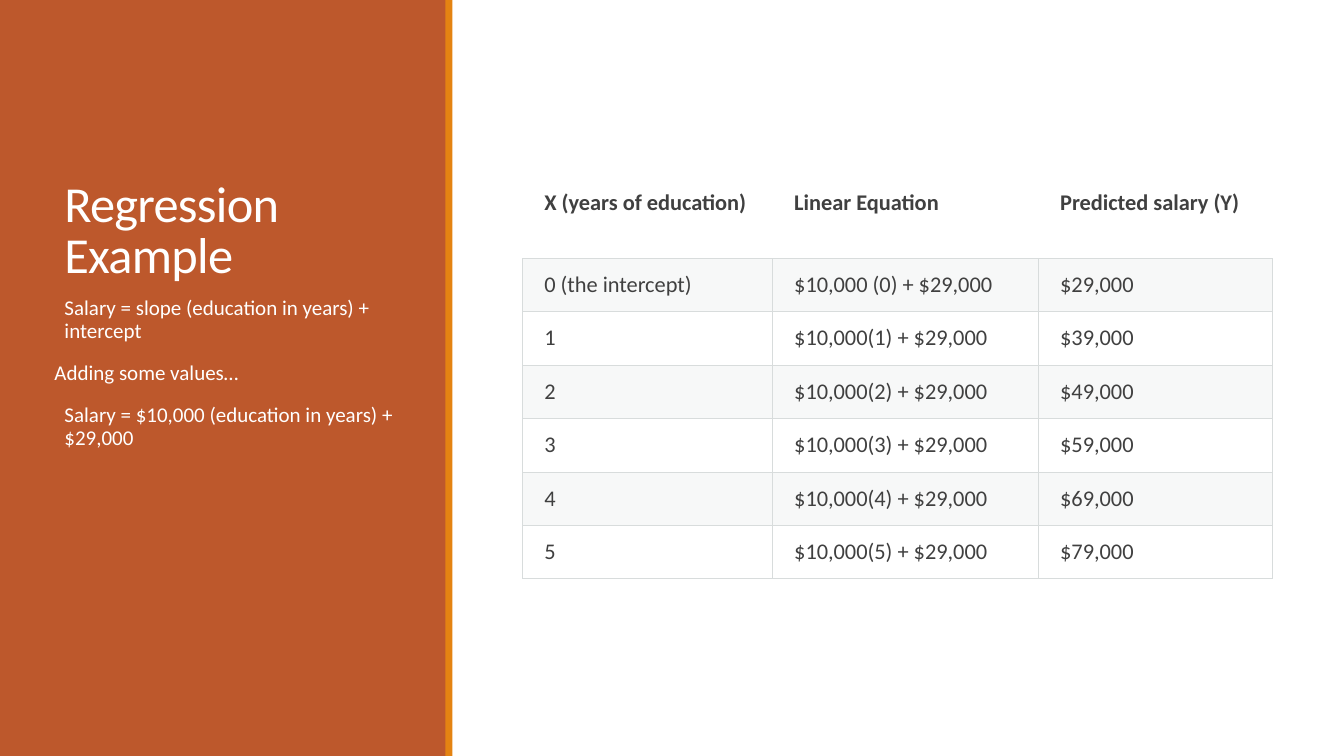
import pptx
import pptx.dml.color
import pptx.enum.shapes
import pptx.enum.text
import pptx.oxml.ns
import pptx.util
from lxml import etree

Pt = pptx.util.Pt
COLORS = {
    "panel": "BD582C",
    "accent": "E48312",
    "white": "FFFFFF",
    "text": "404040",
    "grid": "D8DCDC",
    "band": "D8DEDC",
}


def rgb(name):
    return pptx.dml.color.RGBColor.from_string(COLORS[name])


def add_xml(parent, tag, **attributes):
    return etree.SubElement(parent, pptx.oxml.ns.qn(tag), **attributes)


class SlideBuilder:
    font = "Calibri"

    def __init__(self, s):
        self.s = s

    def rect(self, x, y, w, h, color):
        sp = self.s.shapes.add_shape(
            pptx.enum.shapes.MSO_SHAPE.RECTANGLE, Pt(x), Pt(y), Pt(w), Pt(h))
        sp.shadow.inherit = False
        sp.fill.solid()
        sp.fill.fore_color.rgb = rgb(color)
        sp.line.fill.background()

    def text_box(self, x, y, w, h, margin_x, anchor):
        sp = self.s.shapes.add_textbox(Pt(x), Pt(y), Pt(w), Pt(h))
        tf = sp.text_frame
        tf.word_wrap = True
        tf.vertical_anchor = anchor
        tf.margin_left = tf.margin_right = Pt(margin_x)
        tf.margin_top = tf.margin_bottom = Pt(3.6)
        return tf

    def paragraph(self, p, text, size, color, line, before=0, after=0, bold=False):
        p.line_spacing = line
        p.space_before = Pt(before)
        p.space_after = Pt(after)
        r = p.add_run()
        r.text = text
        r.font.name = self.font
        r.font.size = Pt(size)
        r.font.bold = bold
        r.font.color.rgb = rgb(color)
        return r

    def borders(self, cell, sides):
        """Draw the grid line on the given sides and none on the others."""
        tcPr = cell._tc.get_or_add_tcPr()
        for side in "LRTB":
            ln = add_xml(tcPr, f"a:ln{side}", w=str(Pt(0.75)))
            if side in sides:
                add_xml(add_xml(ln, "a:solidFill"), "a:srgbClr", val=COLORS["grid"])
            else:
                add_xml(ln, "a:noFill")

    def cell_fill(self, cell, banded):
        if not banded:
            cell.fill.background()
            return
        cell.fill.solid()
        cell.fill.fore_color.rgb = rgb("band")
        color = cell._tc.tcPr.find(pptx.oxml.ns.qn("a:solidFill"))[0]
        add_xml(color, "a:alpha", val="20000")

    def table(self, x, y, widths, heights, rows):
        table = self.s.shapes.add_table(
            len(rows), len(widths), Pt(x), Pt(y),
            Pt(sum(widths)), Pt(sum(heights))).table
        table.first_row = table.horz_banding = False
        for column, width in zip(table.columns, widths):
            column.width = Pt(width)
        for i, (row, height, values) in enumerate(zip(table.rows, heights, rows)):
            row.height = Pt(height)
            for cell, value in zip(row.cells, values):
                cell.margin_left, cell.margin_right = Pt(15.4), Pt(5.8)
                cell.margin_top = cell.margin_bottom = Pt(7.7)
                self.borders(cell, "LRTB" if i else "B")
                self.cell_fill(cell, i % 2 == 1)
                self.paragraph(cell.text_frame.paragraphs[0], value, 16, "text",
                               1.07, after=8, bold=i == 0)


def main():
    prs = pptx.Presentation()
    prs.slide_width, prs.slide_height = Pt(960), Pt(540)
    s = prs.slides.add_slide(prs.slide_layouts[6])
    builder = SlideBuilder(s)
    anchor = pptx.enum.text.MSO_ANCHOR

    builder.rect(0, 0, 319, 540, "panel")
    builder.rect(318.2, 0, 5, 540, "accent")

    tf = builder.text_box(38.9, 41, 242.6, 165.6, 7.2, anchor.BOTTOM)
    r = builder.paragraph(tf.paragraphs[0], "Regression Example", 36, "white", 0.85)
    r.font._element.set("spc", "-50")

    tf = builder.text_box(38.9, 208.8, 242.6, 262.8, 0, anchor.TOP)
    notes = [
        ("Salary = slope (education in years) + intercept", 0),
        ("Adding some values…", -7.2),
        ("Salary = $10,000 (education in years) + $29,000", 0),
    ]
    for i, (text, indent) in enumerate(notes):
        p = tf.add_paragraph() if i else tf.paragraphs[0]
        builder.paragraph(p, text, 15, "white", 0.9, before=12, after=2)
        pPr = p._p.get_or_add_pPr()
        pPr.set("marL", str(Pt(7.2)))
        pPr.set("indent", str(Pt(indent)))

    rows = [
        ("X (years of education)", "Linear Equation", "Predicted salary (Y)"),
        ("0 (the intercept)", "$10,000 (0) + $29,000", "$29,000"),
    ]
    rows += [(str(x), f"$10,000({x}) + $29,000", f"${29 + 10 * x},000")
             for x in range(1, 6)]
    builder.table(373.4, 126, [178.5, 190, 167], [58.7] + [38.15] * 6, rows)

    prs.save("out.pptx")


if __name__ == "__main__":
    main()
